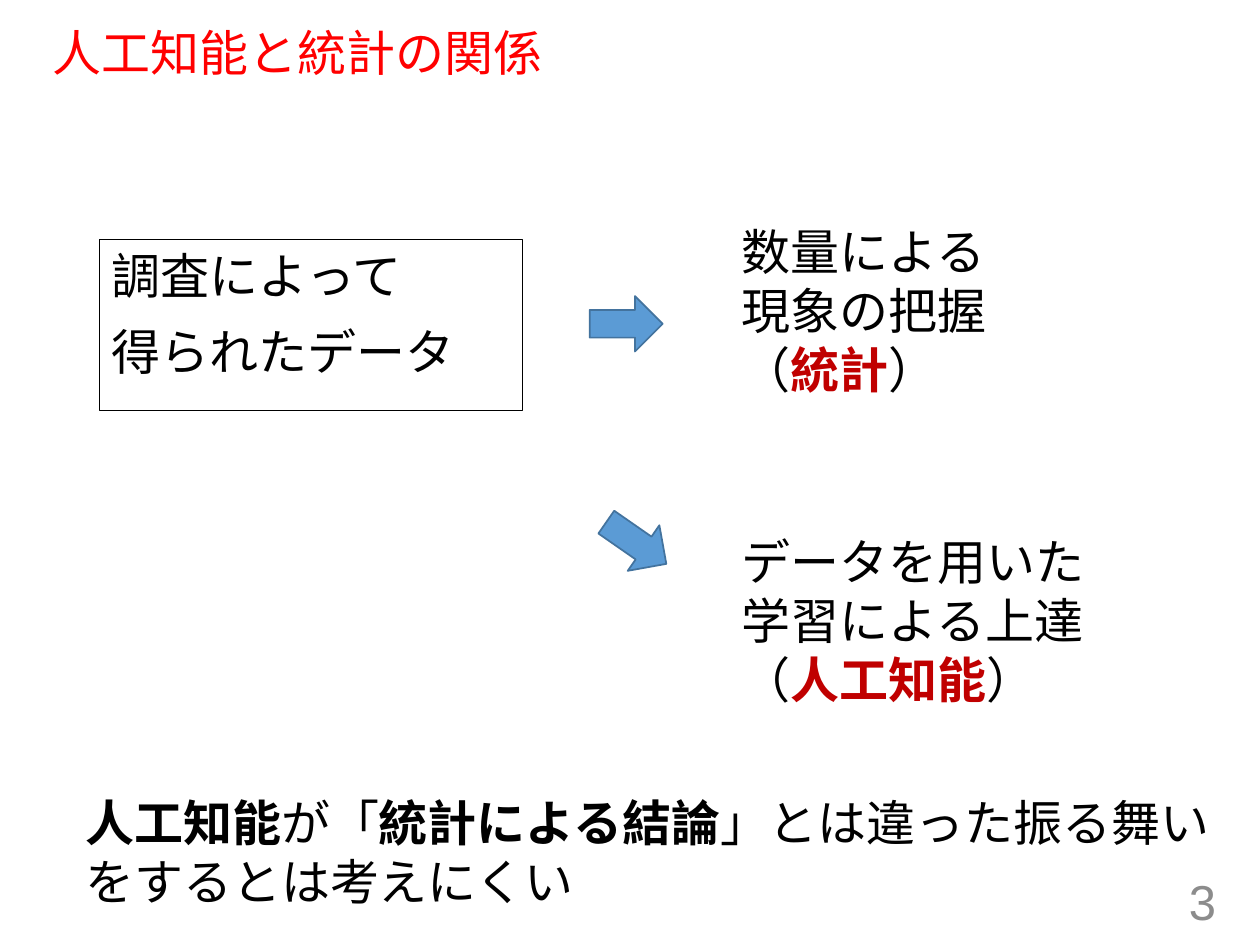
from dataclasses import dataclass

import pptx
import pptx.dml.color
import pptx.enum.shapes
import pptx.enum.text
import pptx.util

Inches = pptx.util.Inches
Pt = pptx.util.Pt
Align = pptx.enum.text.PP_ALIGN
Anchor = pptx.enum.text.MSO_ANCHOR

COLORS = {
    "title": "FF0000",
    "text": "000000",
    "keyword": "C00000",
    "page": "8C8C8C",
    "arrow": "5B9BD5",
    "arrow_edge": "43739E",
}


@dataclass(frozen=True)
class Span:
    text: str
    color: str = "text"
    bold: bool = False


@dataclass(frozen=True)
class TextBlock:
    left: float
    top: float
    width: float
    height: float
    lines: list[list[Span]]
    font: str = "Arial"
    wrap: bool = True
    anchor: Anchor = Anchor.TOP
    align: Align = Align.LEFT
    space_before: float = 0
    line_spacing: float = 1.0
    border: bool = False


@dataclass(frozen=True)
class Arrow:
    left: float
    top: float
    rotation: float = 0


def rgb(name: str) -> pptx.dml.color.RGBColor:
    return pptx.dml.color.RGBColor.from_string(COLORS[name])


def outcome(top: float, width: float, first: str, second: str, keyword: str) -> TextBlock:
    result = [Span("（"), Span(keyword, "keyword", True), Span("）")]
    return TextBlock(5.79, top, width, 1.51, [[Span(first)], [Span(second)], result],
                     font="Calibri", wrap=False)


def draw_text(slide: pptx.slide.Slide, block: TextBlock) -> None:
    box = slide.shapes.add_textbox(Inches(block.left), Inches(block.top),
                                   Inches(block.width), Inches(block.height))
    if block.border:
        box.line.color.rgb = rgb("text")
        box.line.width = Pt(0.75)
    frame = box.text_frame
    frame.word_wrap = block.wrap
    frame.vertical_anchor = block.anchor
    if not block.wrap:
        frame.auto_size = pptx.enum.text.MSO_AUTO_SIZE.SHAPE_TO_FIT_TEXT
    for index, line in enumerate(block.lines):
        paragraph = frame.add_paragraph() if index else frame.paragraphs[0]
        paragraph.alignment = block.align
        paragraph.space_before = Pt(block.space_before)
        paragraph.line_spacing = block.line_spacing
        for span in line:
            run = paragraph.add_run()
            run.text = span.text
            run.font.name = block.font
            run.font.size = Pt(28)
            run.font.bold = span.bold
            run.font.color.rgb = rgb(span.color)


def draw_arrow(slide: pptx.slide.Slide, arrow: Arrow) -> None:
    shape = slide.shapes.add_shape(pptx.enum.shapes.MSO_SHAPE.RIGHT_ARROW,
                                   Inches(arrow.left), Inches(arrow.top),
                                   Inches(0.58), Inches(0.44))
    shape.rotation = arrow.rotation
    shape.shadow.inherit = False
    shape.fill.solid()
    shape.fill.fore_color.rgb = rgb("arrow")
    shape.line.color.rgb = rgb("arrow_edge")
    shape.line.width = Pt(1)


TEXT_BLOCKS = [
    TextBlock(0.32, 0.19, 9.25, 0.51, [[Span("人工知能と統計の関係", "title")]],
              anchor=Anchor.MIDDLE, line_spacing=0.9),
    TextBlock(0.79, 1.9, 3.36, 1.36, [[Span("調査によって")], [Span("得られたデータ")]],
              space_before=10, border=True),
    TextBlock(7.5, 6.95, 2.25, 0.4, [[Span("3", "page")]],
              anchor=Anchor.MIDDLE, align=Align.RIGHT),
    outcome(1.71, 2.17, "数量による", "現象の把握", "統計"),
    outcome(4.17, 2.95, "データを用いた", "学習による上達", "人工知能"),
    TextBlock(0.58, 6.24, 9.23, 1.04, [
        [Span("人工知能", bold=True), Span("が「"),
         Span("統計による結論", bold=True), Span("」とは違った振る舞い")],
        [Span("をするとは考えにくい")],
    ], font="Calibri", wrap=False),
]

ARROWS = [Arrow(4.68, 2.35), Arrow(4.76, 4.09, 34.8)]


def main() -> None:
    presentation = pptx.Presentation()
    presentation.slide_width = Inches(10)
    presentation.slide_height = Inches(7.5)
    slide = presentation.slides.add_slide(presentation.slide_layouts[6])
    for block in TEXT_BLOCKS:
        draw_text(slide, block)
    for arrow in ARROWS:
        draw_arrow(slide, arrow)
    presentation.save("out.pptx")


if __name__ == "__main__":
    main()
